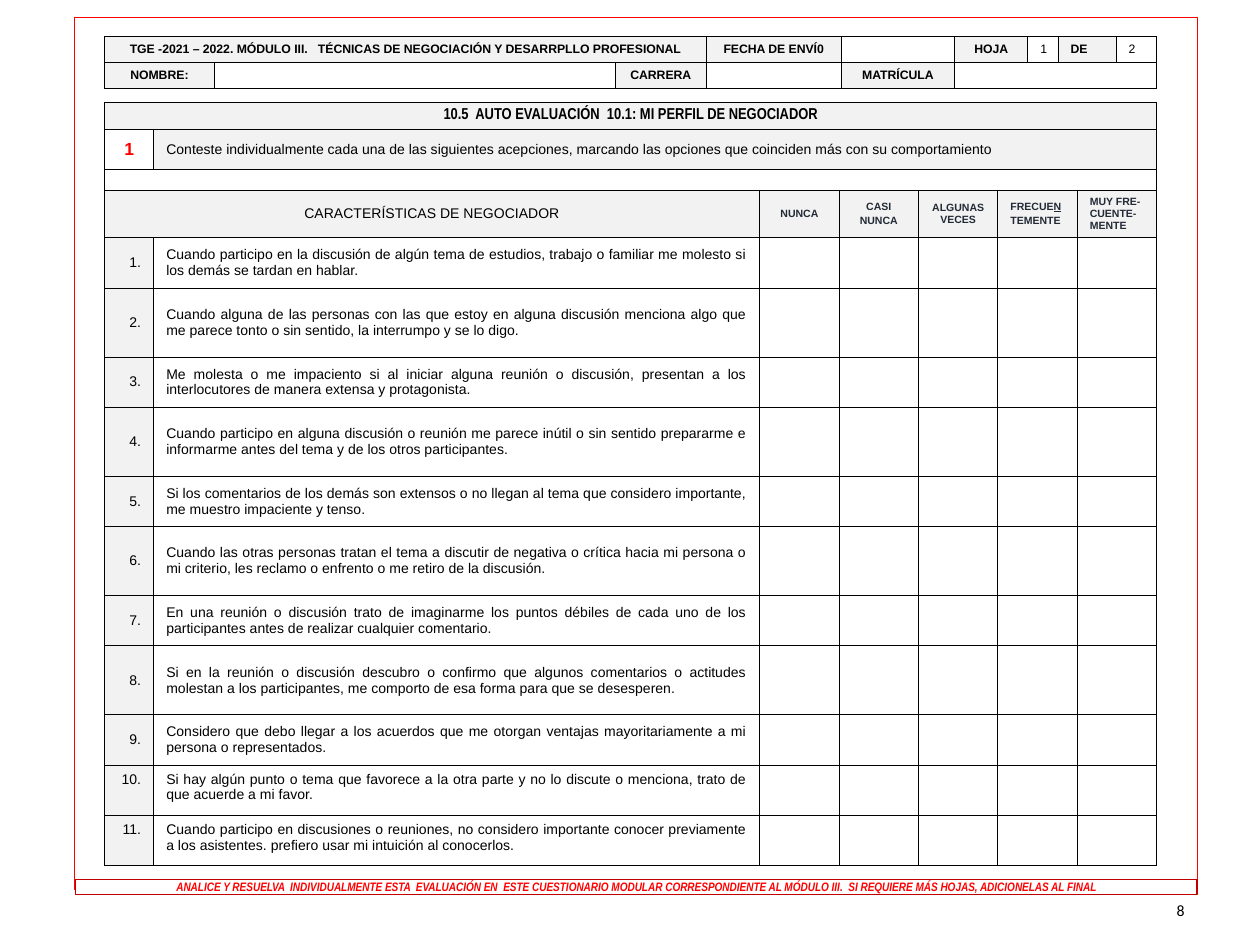
from lxml.etree import SubElement
from pptx import Presentation
from pptx.dml.color import RGBColor
from pptx.enum.shapes import MSO_SHAPE
from pptx.enum.text import MSO_ANCHOR as ANCHOR, PP_ALIGN as ALIGN
from pptx.oxml.ns import qn
from pptx.util import Inches, Pt

BLACK = RGBColor(0x00, 0x00, 0x00)
WHITE = RGBColor(0xFF, 0xFF, 0xFF)
RED = RGBColor(0xFF, 0x00, 0x00)
DARK_RED = RGBColor(0xC0, 0x00, 0x00)
SLATE = RGBColor(0x22, 0x2A, 0x35)
GREY = RGBColor(0xF2, 0xF2, 0xF2)

STATEMENTS = [
    "Cuando participo en la discusión de algún tema de estudios, trabajo o familiar me molesto si los demás se tardan en hablar.",
    "Cuando alguna de las personas con las que estoy en alguna discusión menciona algo que me parece tonto o sin sentido, la interrumpo y se lo digo.",
    "Me molesta o me impaciento si al iniciar alguna reunión o discusión, presentan a los interlocutores de manera extensa y protagonista.",
    "Cuando participo en alguna discusión o reunión me parece inútil o sin sentido prepararme e informarme antes del tema y de los otros participantes.",
    "Si los comentarios de los demás son extensos o no llegan al tema que considero importante, me muestro impaciente y tenso.",
    "Cuando las otras personas tratan el tema a discutir de negativa o crítica hacia mi persona o mi criterio, les reclamo o enfrento o me retiro de la discusión.",
    "En una reunión o discusión trato de imaginarme los puntos débiles de cada uno de los participantes antes de realizar cualquier comentario.",
    "Si en la reunión o discusión descubro o confirmo que algunos comentarios o actitudes molestan a los participantes, me comporto de esa forma para que se desesperen.",
    "Considero que debo llegar a los acuerdos que me otorgan ventajas mayoritariamente a mi persona o representados.",
    "Si hay algún punto o tema que favorece a la otra parte y no lo discute o menciona, trato de que acuerde a mi favor.",
    "Cuando participo en discusiones o reuniones, no considero importante conocer previamente a los asistentes. prefiero usar mi intuición al conocerlos.",
]
FREQUENCIES = [
    ("NUNCA", ALIGN.CENTER),
    ("CASI\nNUNCA", ALIGN.CENTER),
    ("ALGUNAS VECES", ALIGN.CENTER),
    ("FRECUEN\nTEMENTE", ALIGN.LEFT),
    ("MUY FRE-CUENTE-MENTE", ALIGN.LEFT),
]
FORM_WIDTHS = [0.39, 4.81] + [0.63] * 5
TOP_ROWS = [0.22, 0.32, 0.14, 0.38]
STATEMENT_ROWS = [0.4, 0.55] * 4 + [0.4] * 3
HEADER_WIDTHS = [0.87, 3.18, 0.72, 1.07, 0.9, 0.58, 0.24, 0.46, 0.32]


def style(paragraph, size, color=BLACK, bold=False, name="Arial", align=ALIGN.LEFT):
    paragraph.alignment = align
    font = paragraph.font
    font.size, font.bold, font.name = Pt(size), bold, name
    font.color.rgb = color


def write(cell, text, size=8, anchor=ANCHOR.MIDDLE, before=0, **look):
    cell.vertical_anchor = anchor
    cell.text_frame.text = text
    for paragraph in cell.text_frame.paragraphs:
        style(paragraph, size, **look)
        paragraph.space_before = Pt(before)


def add_borders(cell):
    properties = cell._tc.get_or_add_tcPr()
    for position, side in enumerate(("a:lnL", "a:lnR", "a:lnT", "a:lnB")):
        line = properties.makeelement(qn(side), {"w": str(Pt(0.5))})
        fill = SubElement(line, qn("a:solidFill"))
        SubElement(fill, qn("a:srgbClr"), val=str(BLACK))
        properties.insert(position, line)


def add_grid(slide, box, widths, heights, margin):
    """Add a plain bordered table whose columns and rows share out the box."""
    table = slide.shapes.add_table(len(heights), len(widths), *box).table
    table.first_row = table.horz_banding = False
    left, top, width, height = box
    for column, share in zip(table.columns, widths):
        column.width = int(width * share / sum(widths))
    for row, share in zip(table.rows, heights):
        row.height = int(height * share / sum(heights))
    for cell in table.iter_cells():
        cell.fill.solid()
        cell.fill.fore_color.rgb = WHITE
        cell.margin_top = cell.margin_bottom = Inches(margin)
        end = SubElement(cell.text_frame.paragraphs[0]._p, qn("a:endParaRPr"))
        end.set("sz", "600")
        add_borders(cell)
    return table


def shade(cell):
    cell.fill.fore_color.rgb = GREY


def add_header(slide, box):
    table = add_grid(slide, box, HEADER_WIDTHS, [1, 1], 0.03)
    table.cell(0, 0).merge(table.cell(0, 2))
    table.cell(1, 5).merge(table.cell(1, 8))
    labels = [
        (0, 0, "TGE -2021 – 2022. MÓDULO III.   TÉCNICAS DE NEGOCIACIÓN Y DESARRPLLO PROFESIONAL"),
        (0, 3, "FECHA DE ENVÍ0"), (0, 5, "HOJA"), (0, 7, "DE"),
        (1, 0, "NOMBRE:"), (1, 2, "CARRERA"), (1, 4, "MATRÍCULA"),
    ]
    for row, column, label in labels:
        align = ALIGN.LEFT if label == "DE" else ALIGN.CENTER
        write(table.cell(row, column), label, 7, bold=True, align=align)
        shade(table.cell(row, column))
    for column, number in ((6, "1"), (8, "2")):
        write(table.cell(0, column), number, 7)


def add_questionnaire(slide, box):
    table = add_grid(slide, box, FORM_WIDTHS, TOP_ROWS + STATEMENT_ROWS, 0.03)
    last = len(FORM_WIDTHS) - 1
    for row, start, end in ((0, 0, last), (1, 1, last), (2, 0, last), (3, 0, 1)):
        table.cell(row, start).merge(table.cell(row, end))

    title, instruction, heading = table.cell(0, 0), table.cell(1, 1), table.cell(3, 0)
    write(title, "10.5  AUTO EVALUACIÓN  10.1: MI PERFIL DE NEGOCIADOR", 9,
          bold=True, name="Arial Narrow", align=ALIGN.CENTER)
    write(table.cell(1, 0), "1", 10, color=RED, bold=True, align=ALIGN.CENTER)
    write(instruction, "Conteste individualmente cada una de las siguientes acepciones, "
          "marcando las opciones que coinciden más con su comportamiento")
    write(heading, "CARACTERÍSTICAS DE NEGOCIADOR", align=ALIGN.CENTER)
    for cell in (title, instruction, heading):
        shade(cell)

    for column, (frequency, align) in enumerate(FREQUENCIES, 2):
        cell = table.cell(3, column)
        write(cell, frequency, 6, before=1.2, color=SLATE, bold=True, align=align)
        shade(cell)
    broken_word = table.cell(3, 5).text_frame.paragraphs[0]
    broken_word.runs[0].text = "FRECUE"
    hyphen_letter = broken_word.add_run()
    hyphen_letter.text = "N"
    hyphen_letter.font.underline = True

    for number, statement in enumerate(STATEMENTS, 1):
        row = len(TOP_ROWS) + number - 1
        anchor = ANCHOR.TOP if number >= 10 else ANCHOR.MIDDLE
        number_cell, statement_cell = table.cell(row, 0), table.cell(row, 1)
        write(number_cell, f"{number}.", anchor=anchor, align=ALIGN.RIGHT)
        write(statement_cell, statement, anchor=anchor, align=ALIGN.JUSTIFY)
        for cell in (number_cell, statement_cell):
            cell.margin_top = cell.margin_bottom = Inches(0.05)
        shade(number_cell)


def add_box(slide, box, line_color, line_width):
    shape = slide.shapes.add_shape(MSO_SHAPE.RECTANGLE, *box)
    shape.shadow.inherit = False
    shape.fill.background()
    shape.line.color.rgb = line_color
    shape.line.width = Pt(line_width)
    return shape


def add_footer(slide, box):
    footer = add_box(slide, box, DARK_RED, 1)
    footer.fill.solid()
    footer.fill.fore_color.rgb = WHITE
    frame = footer.text_frame
    frame.margin_top = frame.margin_bottom = 0
    frame.vertical_anchor = ANCHOR.MIDDLE
    frame.text = ("ANALICE Y RESUELVA  INDIVIDUALMENTE ESTA  EVALUACIÓN EN  ESTE CUESTIONARIO MODULAR "
                  "CORRESPONDIENTE AL MÓDULO III.  SI REQUIERE MÁS HOJAS, ADICIONELAS AL FINAL")
    notice = frame.paragraphs[0]
    style(notice, 7, RED, True, "Arial Narrow", ALIGN.CENTER)
    notice.font.italic = True


def add_page_number(slide, box):
    frame = slide.shapes.add_textbox(*box).text_frame
    frame.word_wrap = True
    frame.vertical_anchor = ANCHOR.MIDDLE
    frame.text = "8"
    style(frame.paragraphs[0], 9, name="Calibri", align=ALIGN.RIGHT)


def inches(*lengths):
    return [Inches(length) for length in lengths]


def main():
    deck = Presentation()
    deck.slide_width, deck.slide_height = inches(10, 7.5)
    slide = deck.slides.add_slide(deck.slide_layouts[6])
    add_page_number(slide, inches(7.2, 7, 2.3, 0.45))
    add_questionnaire(slide, inches(0.83, 0.81, 8.35, 6.04))
    add_box(slide, inches(0.59, 0.14, 8.91, 6.92), RED, 0.5)
    add_header(slide, inches(0.83, 0.29, 8.35, 0.41))
    add_footer(slide, inches(0.6, 6.98, 8.9, 0.12))
    deck.save("out.pptx")


if __name__ == "__main__":
    main()
